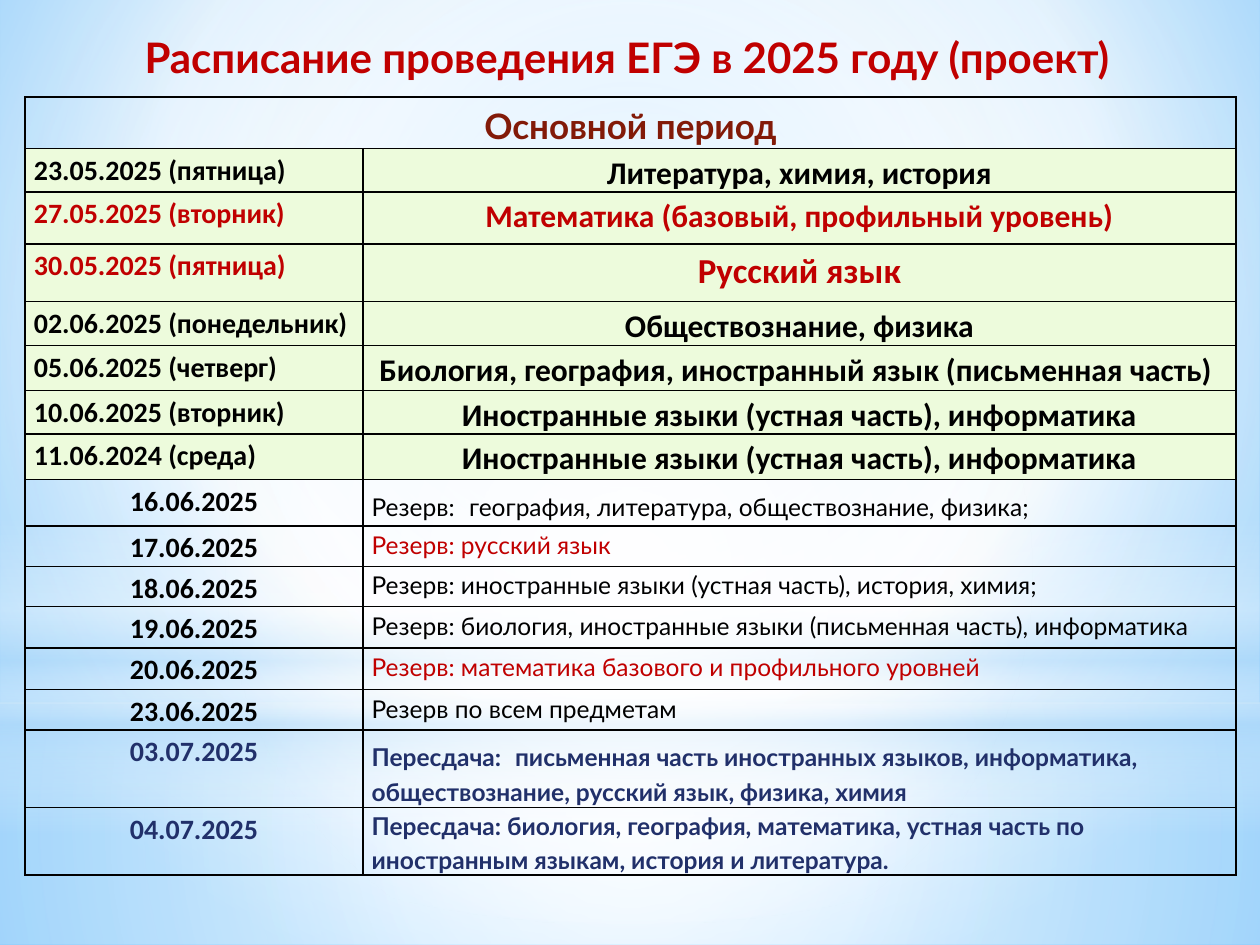
from lxml.etree import SubElement
from pptx import Presentation
from pptx.dml.color import RGBColor
from pptx.enum.shapes import MSO_SHAPE
from pptx.enum.text import MSO_ANCHOR, PP_ALIGN
from pptx.oxml.ns import qn
from pptx.util import Inches, Pt

BLACK = RGBColor(0x00, 0x00, 0x00)
RED = RGBColor(0xC0, 0x00, 0x00)
BROWN = RGBColor(0x82, 0x1A, 0x08)
NAVY = RGBColor(0x21, 0x30, 0x6A)
GREEN = RGBColor(0xED, 0xFB, 0xDC)
WHITE = RGBColor(0xFF, 0xFF, 0xFF)
PALE = RGBColor(0xB4, 0xDC, 0xFA)
SKY = RGBColor(0x9E, 0xD5, 0xFF)
BLUE = RGBColor(0x5B, 0xB9, 0xFF)

LEFT, MID = PP_ALIGN.LEFT, PP_ALIGN.CENTER
CENTRE = (50, 50, 50, 50)

# Backdrop: shape, place, stops (position, colour, opacity), focus of the glow
GLOWS = [
    (MSO_SHAPE.RECTANGLE, (0, 5.58, 10, 1.92),
     [(0, WHITE, 91), (37, WHITE, 76), (100, PALE, 79)], CENTRE),
    (MSO_SHAPE.RECTANGLE, (0, 0, 10, 5.58),
     [(0, WHITE, 89), (48, WHITE, 62), (100, PALE, 79)], CENTRE),
    (MSO_SHAPE.RECTANGLE, (0, 4.12, 10, 2.5),
     [(0, WHITE, 0), (29, WHITE, 30), (45, PALE, 40), (55, WHITE, 26),
      (65, PALE, 60), (100, WHITE, 0)], None),
    (MSO_SHAPE.OVAL, (0, 1.75, 10, 5.58),
     [(0, WHITE, 100), (56, WHITE, 0)], CENTRE),
]

# Exams: row height, date, subjects, colour, text size
EXAMS = [
    (0.34, "23.05.2025 (пятница)", "Литература, химия, история", BLACK, 18),
    (0.41, "27.05.2025 (вторник)",
     "Математика (базовый, профильный уровень)", RED, 18),
    (0.46, "30.05.2025 (пятница)", "Русский язык", RED, 20),
    (0.34, "02.06.2025 (понедельник)", "Обществознание, физика", BLACK, 18),
    (0.36, "05.06.2025 (четверг)",
     "Биология, география, иностранный язык (письменная часть) ", BLACK, 18),
    (0.34, "10.06.2025 (вторник)",
     "Иностранные языки (устная часть), информатика", BLACK, 18),
    (0.36, "11.06.2024 (среда)",
     "Иностранные языки (устная часть), информатика", BLACK, 18),
]

# Reserve days and retakes: row height, date, runs, date colour, colour, bold
SPARE = [
    (0.37, "16.06.2025",
     [("Резерв: ", 14), (" ", 18),
      ("география, литература, обществознание, физика;", 14)],
     BLACK, BLACK, False),
    (0.32, "17.06.2025", [("Резерв: русский язык", 14)], BLACK, RED, False),
    (0.32, "18.06.2025",
     [("Резерв: иностранные языки (устная часть), история, химия;", 14)],
     BLACK, BLACK, False),
    (0.33, "19.06.2025",
     [("Резерв: биология, иностранные языки (письменная часть), информатика",
       14)], BLACK, BLACK, False),
    (0.33, "20.06.2025",
     [("Резерв: математика базового и профильного уровней", 14)],
     BLACK, RED, False),
    (0.32, "23.06.2025", [("Резерв по всем предметам", 14)],
     BLACK, BLACK, False),
    (0.32, "03.07.2025",
     [("Пересдача: ", 14), (" ", 18),
      ("письменная часть иностранных языков, информатика, "
       "обществознание, русский язык, физика, химия", 14)],
     NAVY, NAVY, True),
    (0.32, "04.07.2025",
     [("Пересдача: биология, география, математика, устная часть "
       "по иностранным языкам, история и литература.", 14)],
     NAVY, NAVY, True),
]


def add_tag(top, tag, **vals):
    return SubElement(top, qn(tag), {k: str(v) for k, v in vals.items()})


def add_hue(top, hue, alpha=100):
    node = add_tag(top, "a:srgbClr", val=hue)
    if alpha < 100:
        add_tag(node, "a:alpha", val=alpha * 1000)


def set_grad(fill, node, stops, focus):
    """Swap a plain fill for a glow around focus, or a vertical fade."""
    fill.solid()
    plain = node.find(".//" + qn("a:solidFill"))
    grad = add_tag(plain.getparent(), "a:gradFill", rotWithShape=1)
    plain.getparent().replace(plain, grad)
    steps = add_tag(grad, "a:gsLst")
    for pos, hue, alpha in stops:
        add_hue(add_tag(steps, "a:gs", pos=pos * 1000), hue, alpha)
    if focus:
        glow = add_tag(grad, "a:path", path="circle")
        add_tag(glow, "a:fillToRect",
                **{k: v * 1000 for k, v in zip("ltrb", focus)})
    else:
        add_tag(grad, "a:lin", ang=90 * 60000, scaled=0)


def add_glow(slide, kind, place, stops, focus):
    shape = slide.shapes.add_shape(kind, *map(Inches, place))
    shape.shadow.inherit = False
    shape.line.fill.background()
    set_grad(shape.fill, shape.element.spPr, stops, focus)


def write(frame, runs, face, hue, align, bold=True, gap=1.15):
    para = frame.paragraphs[0]
    para.alignment, para.line_spacing = align, gap
    for text, size in runs:
        run = para.add_run()
        run.text = text
        run.font.color.rgb = hue
        form = {"name": face, "size": Pt(size), "bold": bold}
        for key, val in form.items():
            setattr(run.font, key, val)
    return para


def add_title(slide):
    box = slide.shapes.add_textbox(*map(Inches, (0.12, 0.13, 9.61, 0.71)))
    frame = box.text_frame
    form = {"word_wrap": True, "vertical_anchor": MSO_ANCHOR.MIDDLE,
            "margin_left": Inches(0.2), "margin_bottom": Inches(0.12)}
    for key, val in form.items():
        setattr(frame, key, val)
    words = "Расписание проведения ЕГЭ в 2025 году (проект)"
    para = write(frame, [(words, 24)], "Lato", RED, MID, gap=1.0)
    # Soft shadow under the letters, placed right after their fill
    effects = add_tag(box.element, "a:effectLst")
    shade = add_tag(effects, "a:outerShdw", blurRad=50800, dist=38100,
                    dir=2700000, algn="tl")
    add_hue(shade, BLACK, 40)
    para.runs[0].font.color.rgb = RED
    box.element.find(".//" + qn("a:solidFill")).addnext(effects)


def set_cell(cell, back=None, pad=(0.07, 0), anchor=MSO_ANCHOR.TOP):
    side, end = map(Inches, pad)
    form = {"margin_left": side, "margin_right": side, "margin_top": end,
            "margin_bottom": end, "vertical_anchor": anchor}
    for key, val in form.items():
        setattr(cell, key, val)
    props = cell._tc.get_or_add_tcPr()
    for edge in ("a:lnL", "a:lnR", "a:lnT", "a:lnB"):
        line = add_tag(props, edge, w=Pt(1))
        add_hue(add_tag(line, "a:solidFill"), BLACK)
    if back is None:
        cell.fill.background()
    else:
        cell.fill.solid()
        cell.fill.fore_color.rgb = back


def add_plan(slide):
    highs = [0.41] + [row[0] for row in EXAMS + SPARE]
    place = (0.2, 0.77, 9.61, sum(highs))
    table = slide.shapes.add_table(len(highs), 2, *map(Inches, place)).table
    table.first_row = table.horz_banding = False
    for col, wide in zip(table.columns, (2.68, 6.93)):
        col.width = Inches(wide)
    for row, high in zip(table.rows, highs):
        row.height = Inches(high)

    # Heading across both columns
    head = table.cell(0, 0)
    head.merge(table.cell(0, 1))
    for col in range(2):
        set_cell(table.cell(0, col), None, (0.01, 0.01), MSO_ANCHOR.MIDDLE)
    write(head.text_frame, [("Основной период", 20)], "Lato", BROWN, MID)

    # Main exam days
    for at, (_, date, topic, hue, size) in enumerate(EXAMS, 1):
        for col, runs, align in ((0, [(date, 16)], LEFT),
                                 (1, [(topic, size)], MID)):
            cell = table.cell(at, col)
            set_cell(cell, GREEN)
            write(cell.text_frame, runs, "Calibri", hue, align)

    # Reserve days and retakes
    for at, (_, date, runs, tint, hue, bold) in enumerate(
            SPARE, 1 + len(EXAMS)):
        day, topic = table.cell(at, 0), table.cell(at, 1)
        set_cell(day)
        set_cell(topic)
        write(day.text_frame, [(date, 16)], "Calibri", tint, MID)
        write(topic.text_frame, runs, "Lato", hue, LEFT, bold)


def main():
    deck = Presentation()
    deck.slide_width, deck.slide_height = Inches(10), Inches(7.5)
    slide = deck.slides.add_slide(deck.slide_layouts[6])
    set_grad(slide.background.fill, slide.element,
             [(0, SKY, 100), (60, WHITE, 100), (100, BLUE, 100)],
             (20, 10, 20, 60))
    for glow in GLOWS:
        add_glow(slide, *glow)
    add_title(slide)
    add_plan(slide)
    deck.save("out.pptx")


if __name__ == "__main__":
    main()
